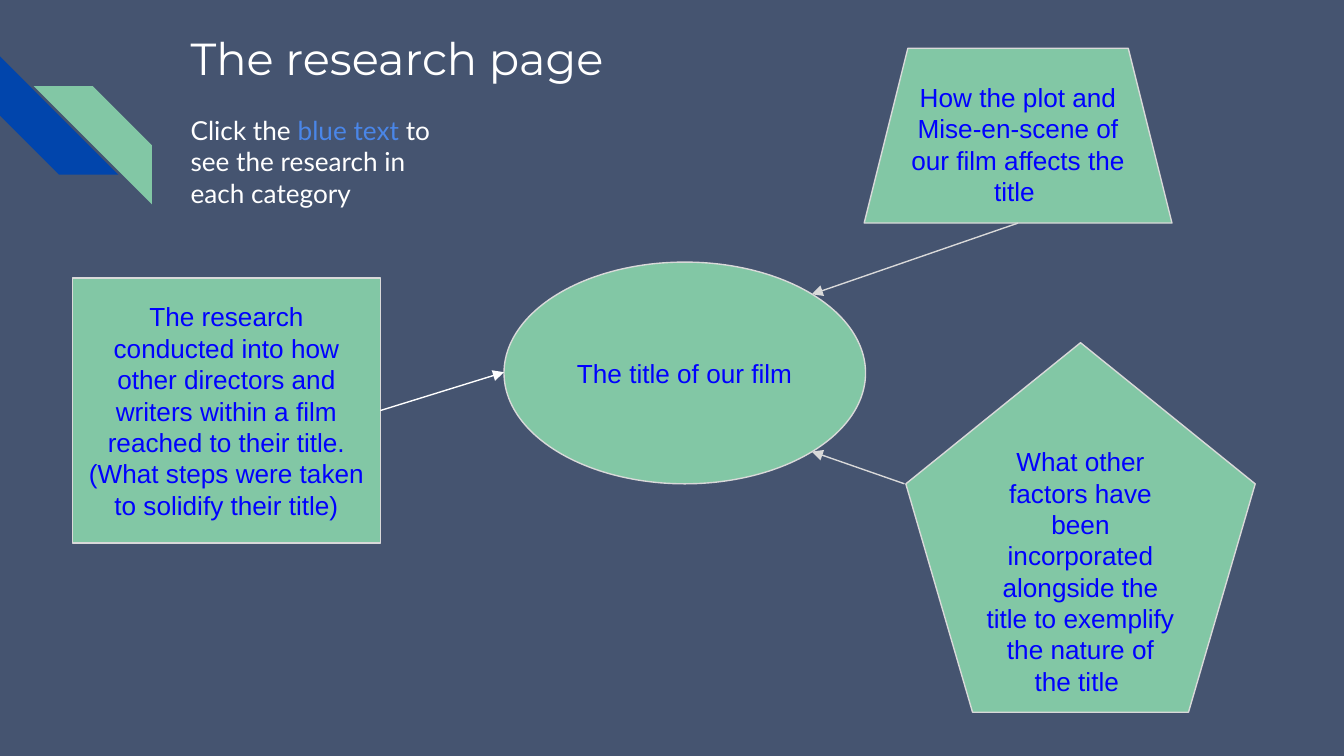
from lxml import etree
from pptx import Presentation
from pptx.dml.color import RGBColor
from pptx.enum.shapes import MSO_CONNECTOR, MSO_SHAPE
from pptx.enum.text import MSO_ANCHOR, PP_ALIGN
from pptx.oxml.ns import qn
from pptx.util import Inches, Pt

# Content
SLIDE_WIDTH = 10
SLIDE_HEIGHT = SLIDE_WIDTH * 9 / 16
BACKGROUND, BLUE, GREEN = "455470", "0145AC", "82C7A5"
WHITE, GREY, LINK, ACCENT = "FFFFFF", "D9D9D9", "0000FF", "4A86E8"

STRIPES = [  # left, top, rotation, colour
    (0, 0.42, 270, BLUE),
    (0.25, 0.64, 90, GREEN),
]
STRIPE_SIZE = 0.88

TEXTS = [  # box, font, size, runs
    ((1.32, 0.13, 3.58, 0.62), "Montserrat", 24, [("The research page", WHITE)]),
    ((1.32, 0.75, 2.16, 0.91), "Lato", 14, [
        ("Click the ", WHITE),
        ("blue text ", ACCENT),
        ("to see the research in each category", WHITE),
    ]),
]

TOPICS = {  # name: preset, box, text
    "title": (MSO_SHAPE.OVAL, (3.75, 1.95, 2.69, 1.65), "The title of our film"),
    "research": (MSO_SHAPE.RECTANGLE, (0.54, 2.07, 2.29, 1.97),
                 "The research conducted into how other directors and writers within "
                 "a film reached to their title. (What steps were taken to solidify "
                 "their title)"),
    "plot": (MSO_SHAPE.TRAPEZOID, (6.43, 0.36, 2.29, 1.3),
             "How the plot and Mise-en-scene of our film affects the title "),
    "factors": (MSO_SHAPE.REGULAR_PENTAGON, (6.74, 2.55, 2.6, 2.75),
                "What other factors have been incorporated alongside the title to "
                "exemplify the nature of the title "),
}

ARROWS = [  # start, end, colour, topic and side joined at the start
    ((2.83, 3.06), (3.75, 2.77), WHITE, ("research", 3)),
    ((7.58, 1.66), (6.04, 2.19), GREY, ("plot", 2)),
    ((6.73, 3.6), (6.04, 3.36), GREY, None),
]


def color(value):
    return RGBColor.from_string(value)


def inches(values):
    return [Inches(value) for value in values]


def add_shape(preset, box, fill):
    shape = slide.shapes.add_shape(preset, *inches(box))
    shape.shadow.inherit = False
    shape.fill.solid()
    shape.fill.fore_color.rgb = color(fill)
    return shape


def write(frame, runs, font, size):
    frame.word_wrap = True
    frame.margin_left = frame.margin_right = Inches(0.1)
    frame.margin_top = frame.margin_bottom = Inches(0.1)
    paragraph = frame.paragraphs[0]
    for text, value in runs:
        run = paragraph.add_run()
        run.text = text
        run.font.name = font
        run.font.size = Pt(size)
        run.font.color.rgb = color(value)
    return paragraph


presentation = Presentation()
presentation.slide_width, presentation.slide_height = inches((SLIDE_WIDTH, SLIDE_HEIGHT))
slide = presentation.slides.add_slide(presentation.slide_layouts[6])
slide.background.fill.solid()
slide.background.fill.fore_color.rgb = color(BACKGROUND)

# Corner stripes
for left, top, rotation, fill in STRIPES:
    stripe = add_shape(MSO_SHAPE.DIAGONAL_STRIPE,
                       (left, top, STRIPE_SIZE, STRIPE_SIZE), fill)
    stripe.rotation = rotation
    stripe.line.fill.background()

# Heading and instruction
for box, font, size, runs in TEXTS:
    text_box = slide.shapes.add_textbox(*inches(box))
    write(text_box.text_frame, runs, font, size)

# Topic shapes
topics = {}
for name, (preset, box, text) in TOPICS.items():
    shape = add_shape(preset, box, GREEN)
    shape.line.color.rgb = color(GREY)
    shape.line.width = Pt(0.75)
    shape.text_frame.vertical_anchor = MSO_ANCHOR.MIDDLE
    paragraph = write(shape.text_frame, [(text, LINK)], "Arial", 14)
    paragraph.alignment = PP_ALIGN.CENTER
    topics[name] = shape

# Arrows to the central topic
for start, end, value, joint in ARROWS:
    arrow = slide.shapes.add_connector(MSO_CONNECTOR.STRAIGHT, *inches(start + end))
    if joint:
        name, side = joint
        arrow.begin_connect(topics[name], side)
    arrow.line.color.rgb = color(value)
    arrow.line.width = Pt(0.75)
    etree.SubElement(arrow.line._get_or_add_ln(), qn("a:tailEnd"), type="triangle")
    etree.SubElement(arrow._element.spPr, qn("a:effectLst"))

presentation.save("out.pptx")
